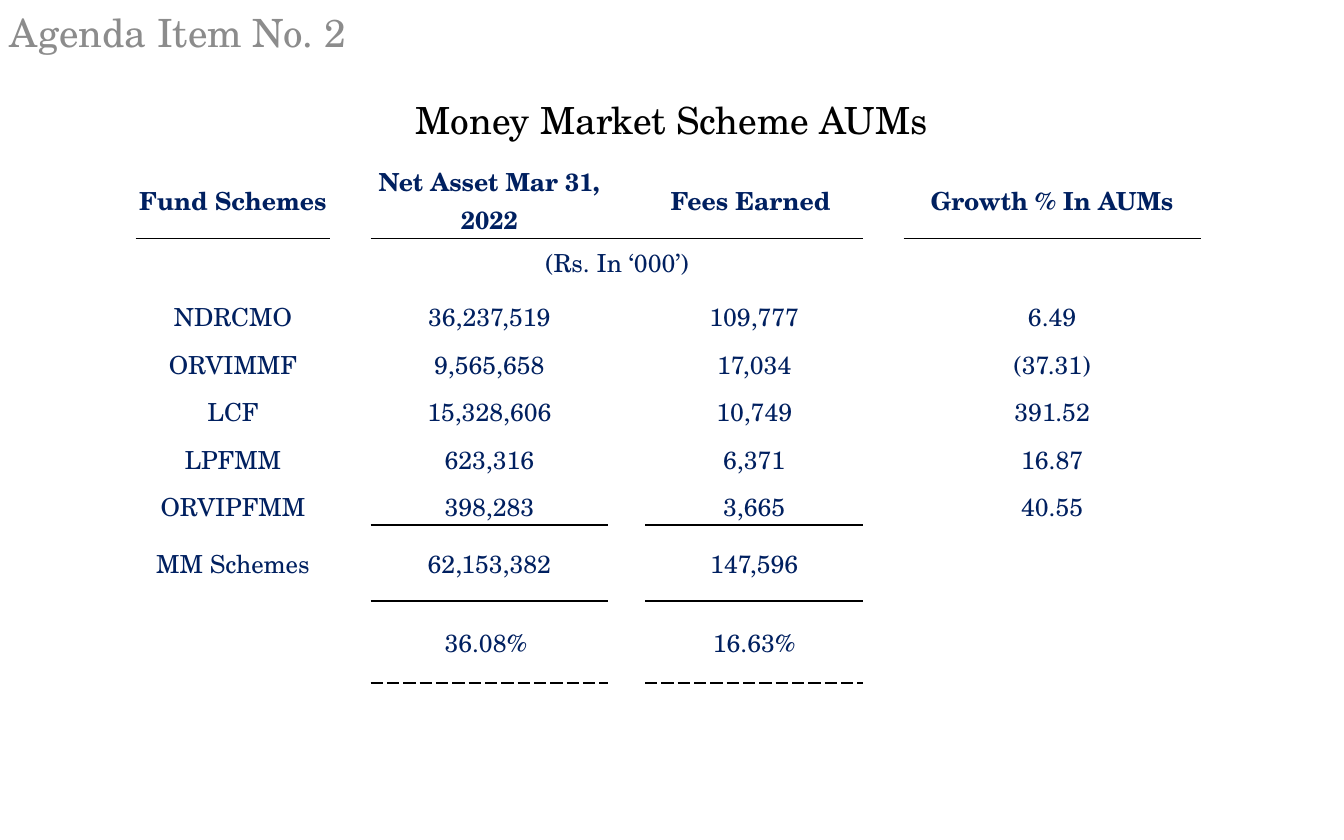
"""Build the slide of money market scheme assets, fees and growth."""
from dataclasses import dataclass

from lxml import etree
from pptx import Presentation
from pptx.dml.color import RGBColor
from pptx.enum.text import MSO_ANCHOR, PP_ALIGN
from pptx.oxml.ns import qn
from pptx.util import Inches, Pt

LEFT, CENTER = PP_ALIGN.LEFT, PP_ALIGN.CENTER
TOP, MIDDLE, BOTTOM = MSO_ANCHOR.TOP, MSO_ANCHOR.MIDDLE, MSO_ANCHOR.BOTTOM
PLAIN_STYLE = "{2D5ABB26-0587-4C30-8999-92F81FD0307C}"


@dataclass(frozen=True)
class Theme:
    font: str = "TeX Gyre Schola"
    gray: str = "8C8C8C"
    black: str = "000000"
    navy: str = "002060"
    white: str = "FFFFFF"
    agenda: int = 25
    heading: int = 24
    body: int = 16


THEME = Theme()


def write(frame, text, size, color, align, bold=False):
    para = frame.paragraphs[0]
    para.alignment = align
    span = para.add_run()
    span.text = text
    formats = {"name": THEME.font, "size": Pt(size), "bold": bold}
    for name, value in formats.items():
        setattr(span.font, name, value)
    span.font.color.rgb = RGBColor.from_string(color)
    return para


def rule(cell, side, color, dash="solid"):
    line = etree.SubElement(cell._tc.get_or_add_tcPr(), qn(f"a:{side}"), w=str(Pt(1.25)))
    fill = etree.SubElement(line, qn("a:solidFill"))
    etree.SubElement(fill, qn("a:srgbClr"), val=color)
    etree.SubElement(line, qn("a:prstDash"), val=dash)


deck = Presentation()
deck.slide_width, deck.slide_height = Inches(12), Inches(7.5)
page = deck.slides.add_slide(deck.slide_layouts[6])

titles = [
    ("Agenda Item No. 2", (-0.01, 0, 3.71, 0.62), THEME.agenda, THEME.gray, LEFT, MIDDLE),
    ("Money Market Scheme AUMs", (0.82, 0.86, 10.35, 0.58), THEME.heading, THEME.black, CENTER, TOP),
]
for text, place, size, color, align, anchor in titles:
    frame = page.shapes.add_textbox(*map(Inches, place)).text_frame
    frame.word_wrap = True
    frame.vertical_anchor = anchor
    write(frame, text, size, color, align).line_spacing = 0.9

records = [
    ("Fund Schemes", "Net Asset Mar 31, 2022", "Fees Earned ", "Growth % In AUMs"),
    ("", "(Rs. In ‘000’)", "", ""),
    ("NDRCMO", "36,237,519", "109,777", "6.49"),
    ("ORVIMMF", "9,565,658", "17,034", "(37.31)"),
    ("LCF", "15,328,606", "10,749", "391.52"),
    ("LPFMM", "623,316", "6,371", "16.87"),
    ("ORVIPFMM", "398,283", "3,665", "40.55"),
    ("MM Schemes", "62,153,382", "147,596", ""),
    ("", "36.08% ", "16.63%", ""),
]
widths = [1.74, 0.36, 2.12, 0.33, 1.95, 0.36, 2.65]
heights = [0.69, 0.44, 0.42, 0.43, 0.42, 0.43, 0.42, 0.68, 0.73]
anchors = [MIDDLE, TOP] + [BOTTOM] * 5 + [MIDDLE] * 2
ruled_columns = {0: (0, 2, 4, 6), 6: (2, 4), 7: (2, 4), 8: (2, 4)}

table = page.shapes.add_table(
    len(heights), len(widths), Inches(1.21), Inches(1.44),
    Inches(sum(widths)), Inches(sum(heights)),
).table
table.first_row = table.horz_banding = False
table._tbl.tblPr.find(qn("a:tableStyleId")).text = PLAIN_STYLE
for column, width in zip(table.columns, widths):
    column.width = Inches(width)
for row, height in zip(table.rows, heights):
    row.height = Inches(height)
table.cell(1, 2).merge(table.cell(1, 4))

for row, record in enumerate(records):
    insets = {
        "margin_left": 0.01,
        "margin_right": 0.01,
        "margin_top": 0.05 if row == 1 else 0.01,
        "margin_bottom": 0,
    }
    for column in range(len(widths)):
        cell = table.cell(row, column)
        for name, value in insets.items():
            setattr(cell, name, Inches(value))
        cell.vertical_anchor = anchors[row]
        for side, edge in (("lnT", row - 1), ("lnB", row)):
            ruled = column in ruled_columns.get(edge, ())
            rule(cell, side, THEME.black if ruled else THEME.white,
                 "sysDash" if ruled and edge == 8 else "solid")
        cell.fill.solid()
        cell.fill.fore_color.rgb = RGBColor.from_string(THEME.white)
        if column % 2 == 0 and record[column // 2]:
            write(cell.text_frame, record[column // 2], THEME.body, THEME.navy, CENTER, row == 0)

deck.save("out.pptx")
